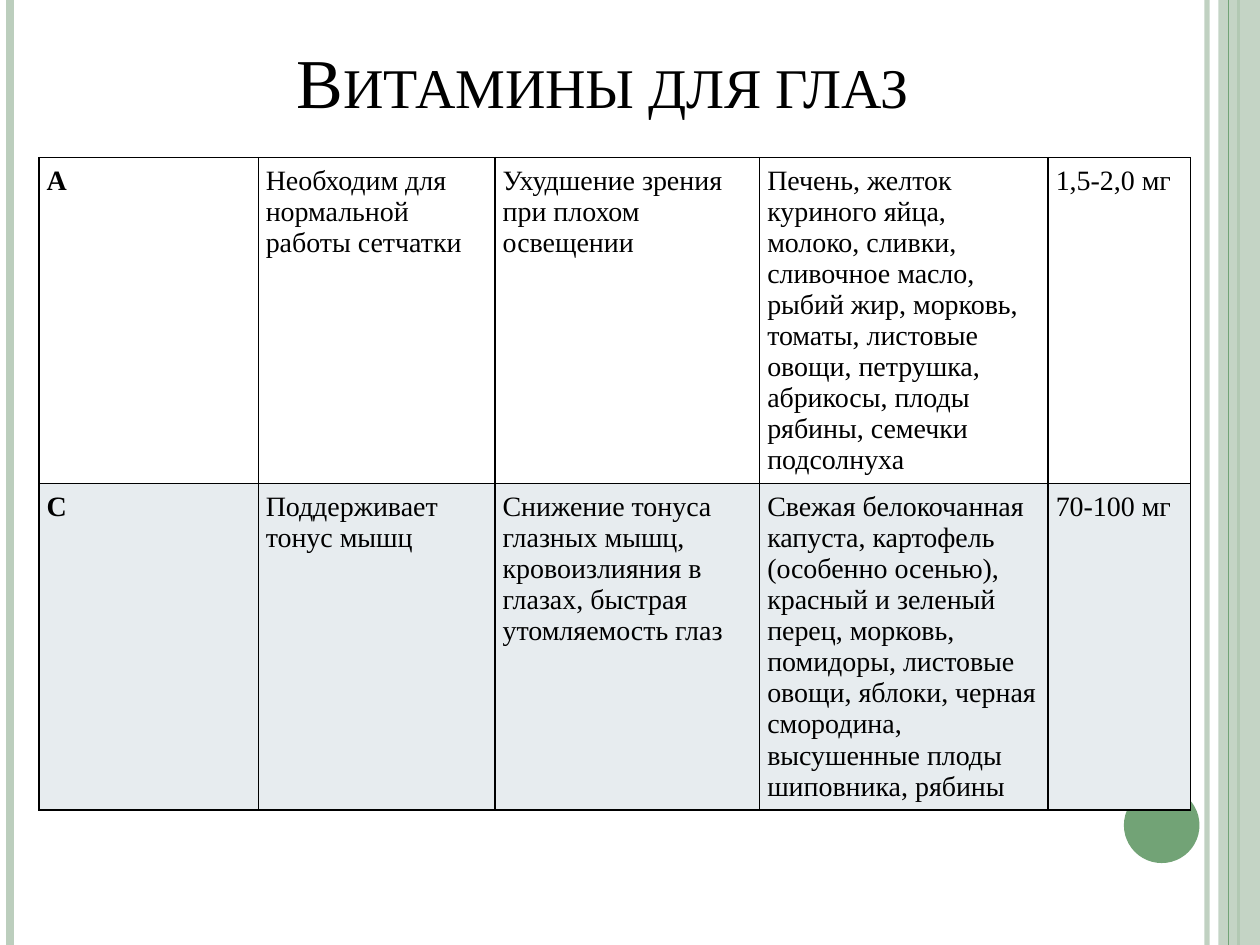
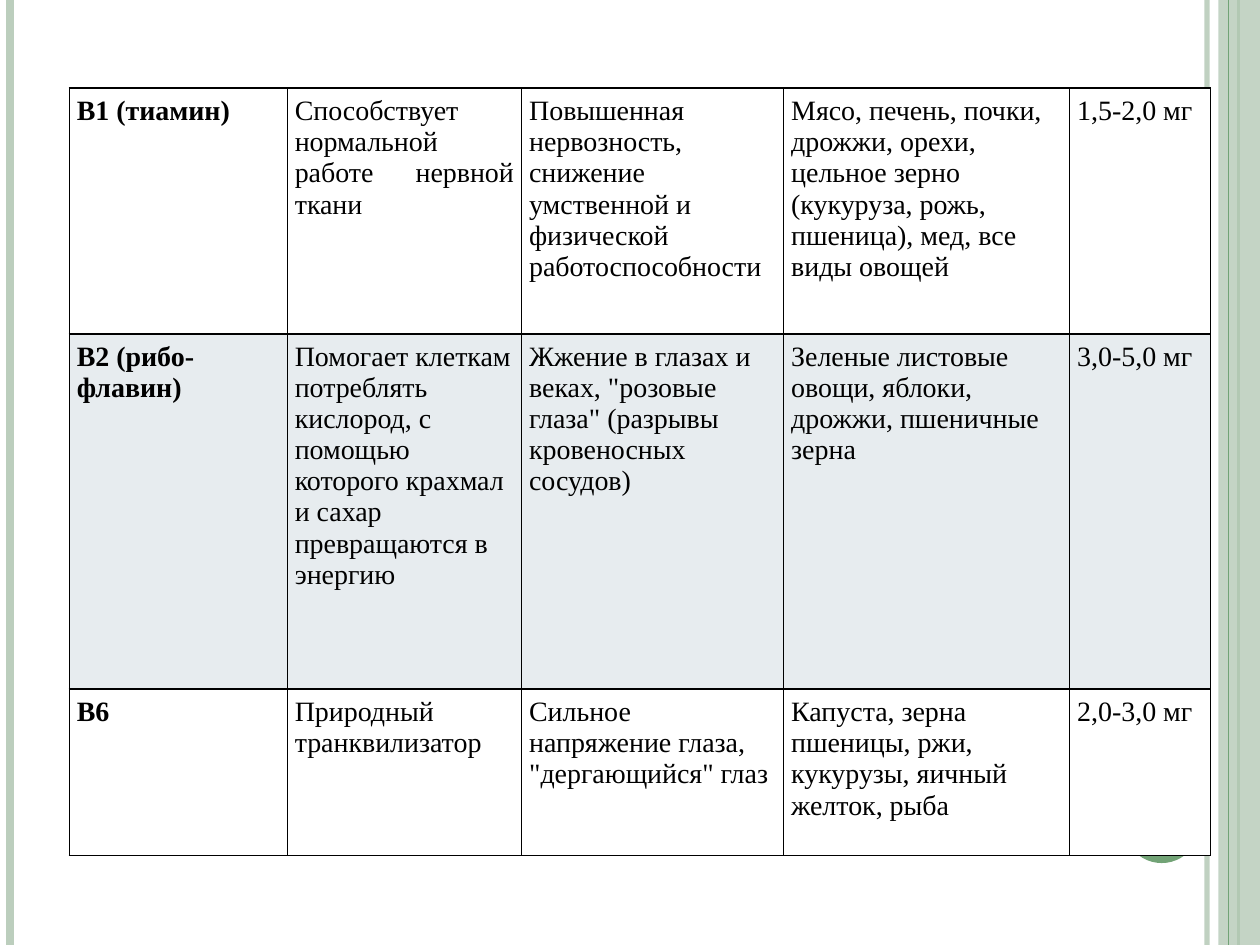
from typing import NamedTuple

from lxml.etree import SubElement
from pptx import Presentation
from pptx.dml.color import RGBColor
from pptx.enum.shapes import MSO_CONNECTOR, MSO_SHAPE
from pptx.enum.text import MSO_ANCHOR, PP_ALIGN
from pptx.oxml import parse_xml
from pptx.oxml.ns import nsdecls, qn
from pptx.util import Inches, Pt

FONT = "Times New Roman"
BLACK = RGBColor(0x00, 0x00, 0x00)
WHITE = RGBColor(0xFF, 0xFF, 0xFF)
PALE_GREEN = RGBColor(0xBC, 0xCE, 0xBD)
GREEN = RGBColor(0x72, 0xA3, 0x76)
PALE_GREY = RGBColor(0xE7, 0xEC, 0xEF)

WIDTH, HEIGHT = 10, 7.5
CELL_MARGIN = Inches(0.06)


class Rule(NamedTuple):
    x: float
    weight: float
    color: RGBColor
    opacity: int = 100


class VitaminTable(NamedTuple):
    left: float
    top: float
    col_widths: list[float]
    row_heights: list[float]
    rows: list[list[str]]


# Vertical rules behind and in front of the right-hand band
RULES_BEHIND = [
    Rule(9.58, 3, PALE_GREEN, 93),
    Rule(0.08, 4.5, PALE_GREEN),
    Rule(9.83, 1.5, GREEN),
]
RULE_IN_FRONT = Rule(9.75, 0.75, GREEN)

# Columns: vitamin, role, signs of deficiency, sources, daily dose
VITAMINS_A_C = VitaminTable(
    0.31, 1.25, [1.74, 1.88, 2.1, 2.29, 1.13], [2.58, 2.58],
    [
        ["А", "Необходим для нормальной работы сетчатки",
         "Ухудшение зрения при плохом освещении",
         "Печень, желток куриного яйца, молоко, сливки, сливочное масло, "
         "рыбий жир, морковь, томаты, листовые овощи, петрушка, абрикосы, "
         "плоды рябины, семечки подсолнуха",
         "1,5-2,0 мг"],
        ["C", "Поддерживает тонус мышц",
         "Снижение тонуса глазных мышц, кровоизлияния в глазах, "
         "быстрая утомляемость глаз",
         "Свежая белокочанная капуста, картофель (особенно осенью), "
         "красный и зеленый перец, морковь, помидоры, листовые овощи, "
         "яблоки, черная смородина, высушенные плоды шиповника, рябины",
         "70-100 мг"],
    ],
)
VITAMINS_B = VitaminTable(
    0.55, 0.7, [1.73, 1.86, 2.08, 2.27, 1.12], [1.95, 2.82, 1.32],
    [
        ["В1 (тиамин)", "Способствует нормальной работе нервной ткани",
         "Повышенная нервозность, снижение умственной и физической "
         "работоспособности",
         "Мясо, печень, почки, дрожжи, орехи, цельное зерно "
         "(кукуруза, рожь, пшеница), мед, все виды овощей",
         "1,5-2,0 мг"],
        ["В2 (рибо- флавин)",
         "Помогает клеткам потреблять кислород, с помощью которого "
         "крахмал и сахар превращаются в энергию",
         'Жжение в глазах и веках, "розовые глаза" '
         "(разрывы кровеносных сосудов)",
         "Зеленые листовые овощи, яблоки, дрожжи, пшеничные зерна",
         "3,0-5,0 мг"],
        ["В6", "Природный транквилизатор",
         'Сильное напряжение глаза, "дергающийся" глаз',
         "Капуста, зерна пшеницы, ржи, кукурузы, яичный желток, рыба",
         "2,0-3,0 мг"],
    ],
)


def set_opacity(element, percent: int) -> None:
    color = element.find(".//" + qn("a:srgbClr"))
    SubElement(color, qn("a:alpha"), val=str(percent * 1000))


def add_rule(s, rule: Rule) -> None:
    x = Inches(rule.x)
    line = s.shapes.add_connector(MSO_CONNECTOR.STRAIGHT, x, 0, x, Inches(HEIGHT))
    line.line.color.rgb = rule.color
    line.line.width = Pt(rule.weight)
    sp_pr = line._element.spPr
    if rule.opacity < 100:
        set_opacity(sp_pr, rule.opacity)
    SubElement(sp_pr, qn("a:effectLst"))


def add_filled(s, kind, left: float, top: float, width: float, height: float,
               color: RGBColor):
    sp = s.shapes.add_shape(kind, Inches(left), Inches(top),
                            Inches(width), Inches(height))
    sp.shadow.inherit = False
    sp.fill.solid()
    sp.fill.fore_color.rgb = color
    sp.line.fill.background()
    return sp


def add_decoration(s) -> None:
    for rule in RULES_BEHIND:
        add_rule(s, rule)
    band = add_filled(s, MSO_SHAPE.RECTANGLE, 9.67, 0, 0.33, HEIGHT, PALE_GREEN)
    set_opacity(band._element.spPr, 87)
    add_rule(s, RULE_IN_FRONT)
    add_filled(s, MSO_SHAPE.OVAL, 8.92, 6.25, 0.6, 0.6, GREEN)


def set_title(s, text: str) -> None:
    title = s.shapes.title
    title.left, title.top = Inches(0.7), Inches(-0.23)
    title.width, title.height = Inches(8.17), Inches(1.25)
    tf = title.text_frame
    tf.text = text
    tf.vertical_anchor = MSO_ANCHOR.BOTTOM
    p = tf.paragraphs[0]
    p.alignment = PP_ALIGN.CENTER
    r = p.runs[0]
    r.font.name, r.font.size = FONT, Pt(40)
    r.font.color.rgb = BLACK
    r.font._element.set("cap", "small")


def add_borders(cell) -> None:
    tc_pr = cell._tc.get_or_add_tcPr()
    for i, side in enumerate("LRTB"):
        tc_pr.insert(i, parse_xml(
            f'<a:ln{side} {nsdecls("a")} w="{Pt(1)}"><a:solidFill>'
            f'<a:srgbClr val="{BLACK}"/></a:solidFill></a:ln{side}>'))


def fill_cell(cell, text: str, color: RGBColor, bold: bool) -> None:
    cell.margin_left = cell.margin_right = CELL_MARGIN
    cell.margin_top = cell.margin_bottom = CELL_MARGIN
    cell.fill.solid()
    cell.fill.fore_color.rgb = color
    add_borders(cell)
    cell.text_frame.text = text
    r = cell.text_frame.paragraphs[0].runs[0]
    r.font.name, r.font.size, r.font.bold = FONT, Pt(16), bold
    r.font.color.rgb = BLACK


def add_vitamin_table(s, data: VitaminTable):
    table = s.shapes.add_table(
        len(data.rows), len(data.col_widths), Inches(data.left), Inches(data.top),
        Inches(sum(data.col_widths)), Inches(sum(data.row_heights))).table
    table.first_row = table.horz_banding = False
    for column, width in zip(table.columns, data.col_widths):
        column.width = Inches(width)
    for i, (row, height, texts) in enumerate(
            zip(table.rows, data.row_heights, data.rows)):
        row.height = Inches(height)
        color = PALE_GREY if i % 2 else WHITE
        for j, (cell, text) in enumerate(zip(row.cells, texts)):
            fill_cell(cell, text, color, bold=j == 0)
    return table


def main() -> None:
    prs = Presentation()
    prs.slide_width, prs.slide_height = Inches(WIDTH), Inches(HEIGHT)
    title_only, blank = prs.slide_layouts[5], prs.slide_layouts[6]

    # Slide 1: vitamins A and C
    s = prs.slides.add_slide(title_only)
    add_decoration(s)
    set_title(s, "Витамины для глаз")
    add_vitamin_table(s, VITAMINS_A_C)

    # Slide 2: B vitamins
    s = prs.slides.add_slide(blank)
    add_decoration(s)
    table = add_vitamin_table(s, VITAMINS_B)
    thiamine_role = table.cell(0, 1).text_frame.paragraphs[0]
    thiamine_role.alignment = PP_ALIGN.JUSTIFY

    prs.save("out.pptx")


if __name__ == "__main__":
    main()
